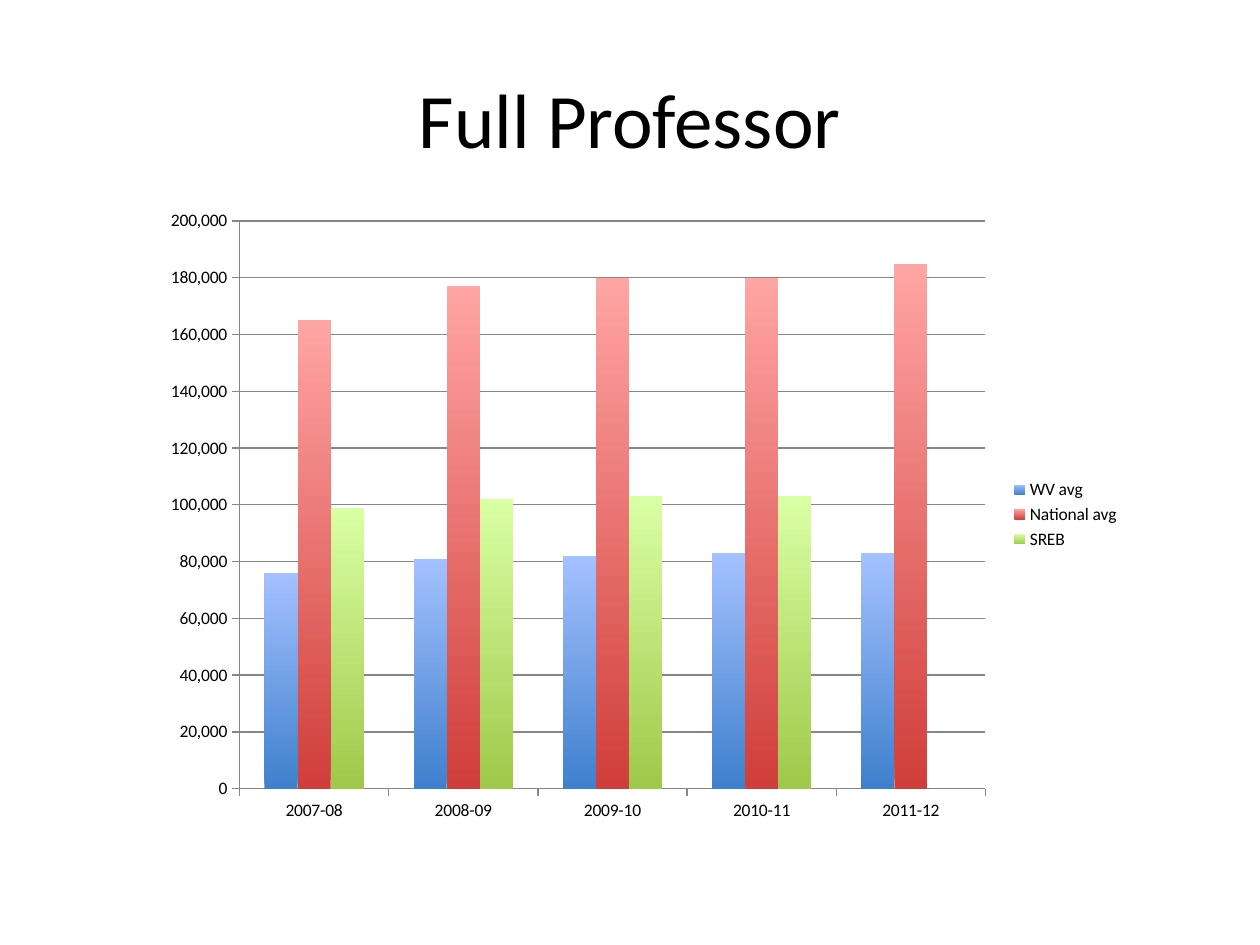
import lxml.etree
import pptx
import pptx.chart.data
import pptx.dml.color
import pptx.enum.chart
import pptx.enum.text
import pptx.oxml
import pptx.util

CATEGORIES = ["2007-08", "2008-09", "2009-10", "2010-11", "2011-12"]
# Name, values, gradient from bottom to top
SERIES = [
    ("WV avg", [76000, 81000, 82000, 83000, 83000], ("3F80CD", "A4C1FF")),
    ("National avg", [165000, 177000, 180000, 180000, 185000], ("D03E3A", "FFA5A3")),
    ("SREB", [99000, 102000, 103000, 103000, None], ("9FC94A", "D9FFA4")),
]
PLOT_SHARES = {"x": 0.09, "y": 0.04, "w": 0.76, "h": 0.89}


def color(value):
    return pptx.dml.color.RGBColor.from_string(value)


def apply(target, **values):
    for name, value in values.items():
        setattr(target, name, value)


class SlideBuilder:
    font = "Calibri"
    ink = "000000"
    line = "868686"

    def __init__(self, width, height):
        self.presentation = pptx.Presentation()
        apply(self.presentation, slide_width=pptx.util.Inches(width),
              slide_height=pptx.util.Inches(height))
        self.slide = self.presentation.slides.add_slide(self.presentation.slide_layouts[6])

    def place(self, left, top, width, height):
        """Turn shares of the slide into lengths."""
        across, down = self.presentation.slide_width, self.presentation.slide_height
        return int(left * across), int(top * down), int(width * across), int(height * down)

    def style_font(self, font, size):
        apply(font, name=self.font, size=pptx.util.Pt(size))
        font.color.rgb = color(self.ink)

    def title(self, text, *shares):
        frame = self.slide.shapes.add_textbox(*self.place(*shares)).text_frame
        apply(frame, word_wrap=True, vertical_anchor=pptx.enum.text.MSO_ANCHOR.MIDDLE)
        paragraph = frame.paragraphs[0]
        apply(paragraph, text=text, alignment=pptx.enum.text.PP_ALIGN.CENTER)
        self.style_font(paragraph.runs[0].font, 44)

    def style_line(self, line):
        line.color.rgb = color(self.line)
        line.width = pptx.util.Pt(0.75)

    def column_chart(self, categories, series_rows, *shares):
        data = pptx.chart.data.CategoryChartData(number_format="#,##0")
        data.categories = categories
        for name, values, _ in series_rows:
            data.add_series(name, values)
        chart = self.slide.shapes.add_chart(
            pptx.enum.chart.XL_CHART_TYPE.COLUMN_CLUSTERED, *self.place(*shares), data).chart
        apply(chart, has_title=False, has_legend=True)
        self.style_font(chart.font, 10)
        apply(chart.legend, position=pptx.enum.chart.XL_LEGEND_POSITION.RIGHT,
              include_in_layout=False)

        # Columns
        plot = chart.plots[0]
        apply(plot, gap_width=150, overlap=0, vary_by_categories=False)
        for series, (_, _, shades) in zip(plot.series, series_rows):
            fill = series.format.fill
            fill.gradient()
            fill.gradient_angle = 90
            for stop, shade in zip(fill.gradient_stops, shades):
                stop.color.rgb = color(shade)

        # Axes
        for axis in (chart.category_axis, chart.value_axis):
            apply(axis, major_tick_mark=pptx.enum.chart.XL_TICK_MARK.OUTSIDE,
                  minor_tick_mark=pptx.enum.chart.XL_TICK_MARK.NONE)
            self.style_line(axis.format.line)
        apply(chart.value_axis, minimum_scale=0, maximum_scale=200000,
              major_unit=20000, has_major_gridlines=True)
        self.style_line(chart.value_axis.major_gridlines.format.line)
        apply(chart.value_axis.tick_labels, number_format="#,##0",
              number_format_is_linked=False)
        self.fix_plot_area(chart)

    def fix_plot_area(self, chart):
        """Give the inner plot area a fixed place within the chart."""
        qualify = pptx.oxml.ns.qn
        area = chart.plots[0]._element.getparent()
        for old in area.findall(qualify("c:layout")):
            area.remove(old)
        layout = lxml.etree.Element(qualify("c:layout"))
        area.insert(0, layout)
        manual = lxml.etree.SubElement(layout, qualify("c:manualLayout"))
        settings = {"layoutTarget": "inner", "xMode": "edge", "yMode": "edge", **PLOT_SHARES}
        for name, value in settings.items():
            lxml.etree.SubElement(manual, qualify("c:" + name)).set("val", str(value))


def main():
    builder = SlideBuilder(10, 7.5)
    builder.title("Full Professor", 0.05, 0.04, 0.9, 0.17)
    builder.column_chart(CATEGORIES, SERIES, 0.12, 0.207, 0.779, 0.675)
    builder.presentation.save("out.pptx")


if __name__ == "__main__":
    main()
